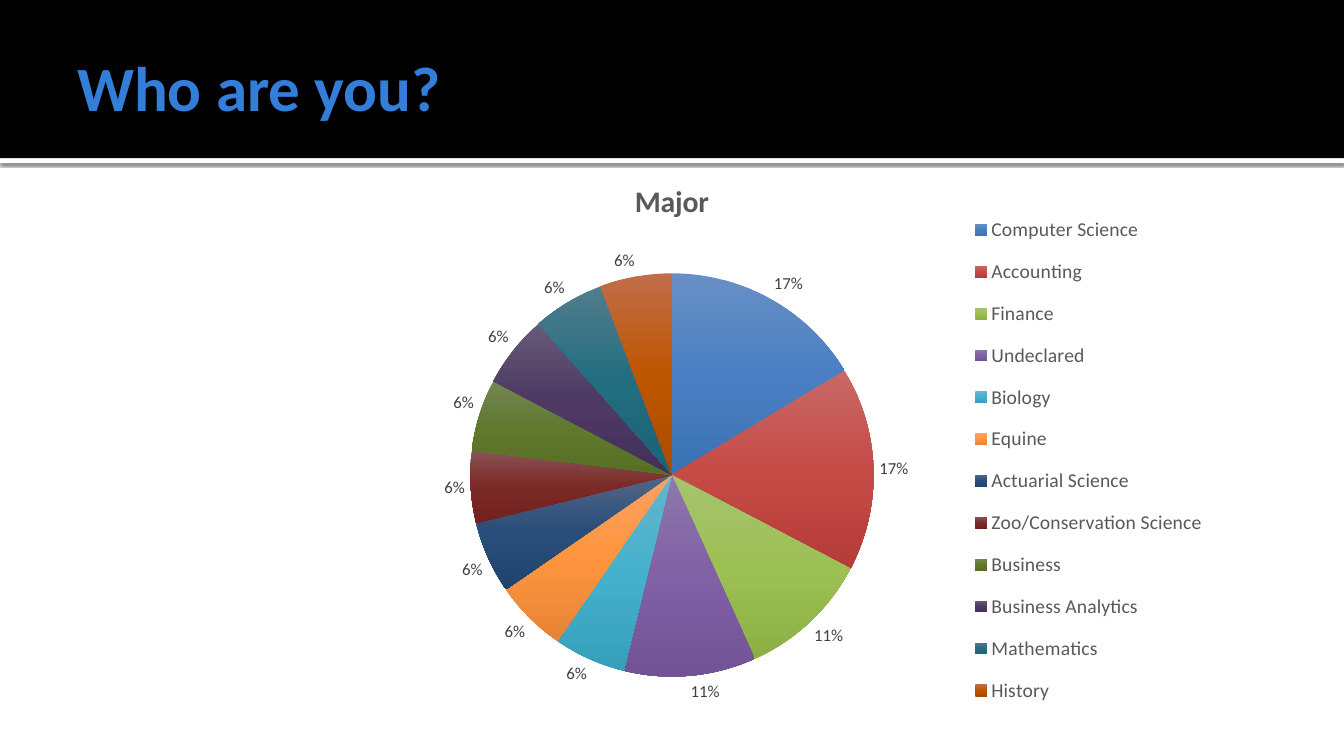
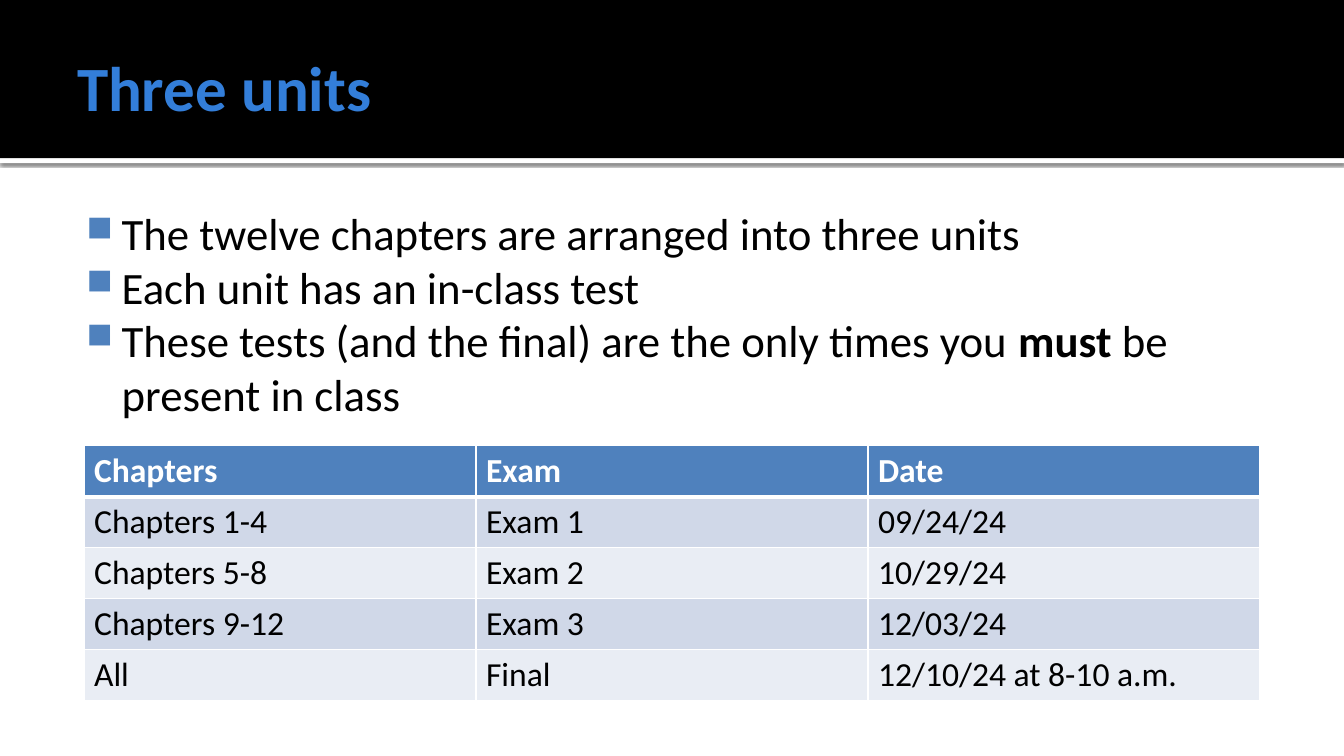
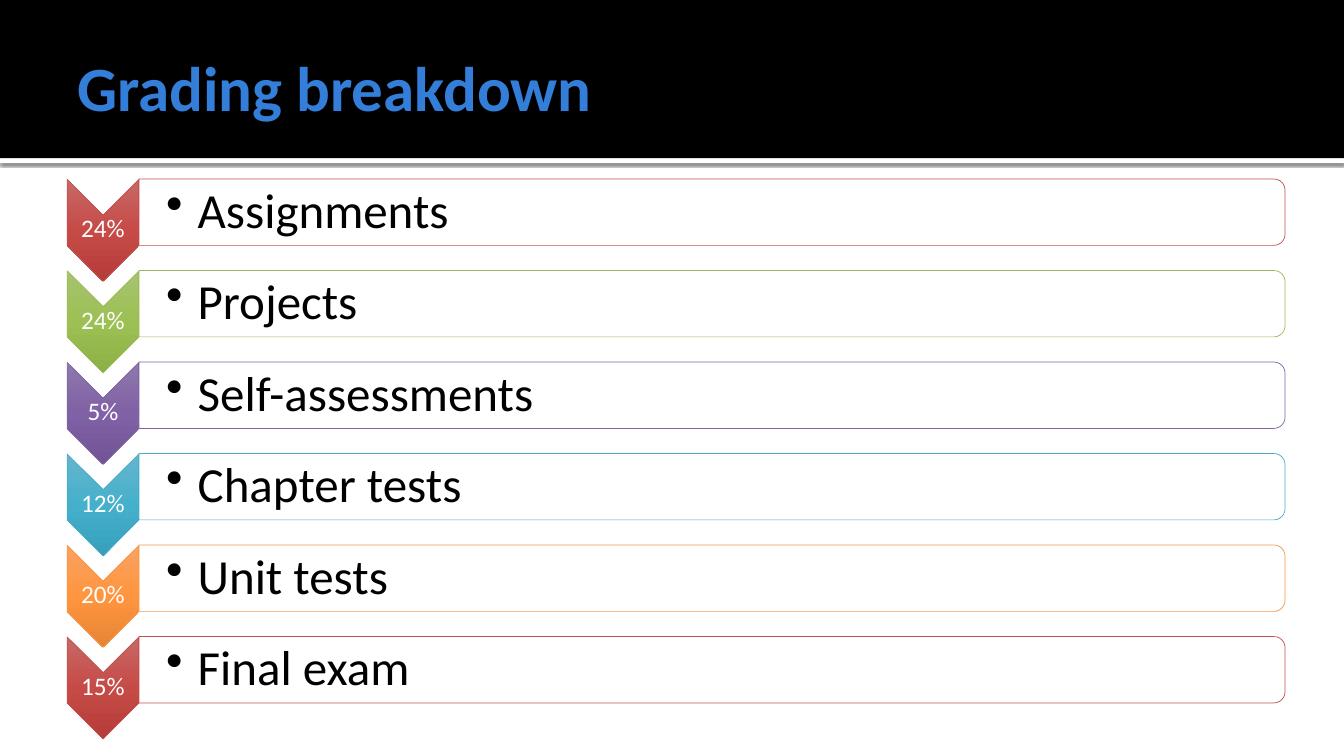
"""Build three course slides: majors pie chart, unit table and grading breakdown."""
from pptx import Presentation
from pptx.chart.data import CategoryChartData
from pptx.dml.color import RGBColor
from pptx.enum.chart import XL_CHART_TYPE, XL_LABEL_POSITION, XL_LEGEND_POSITION
from pptx.enum.shapes import MSO_SHAPE
from pptx.enum.text import MSO_ANCHOR, PP_ALIGN
from pptx.oxml import parse_xml
from pptx.oxml.ns import nsdecls, qn
from pptx.util import Pt

PIE = XL_CHART_TYPE.PIE
OUTSIDE = XL_LABEL_POSITION.OUTSIDE_END
RIGHT = XL_LEGEND_POSITION.RIGHT
RECT = MSO_SHAPE.RECTANGLE
CHEVRON = MSO_SHAPE.CHEVRON
ROUND_TOP = MSO_SHAPE.ROUND_2_SAME_RECTANGLE
MIDDLE = MSO_ANCHOR.MIDDLE
CENTER = PP_ALIGN.CENTER

FONT = "Calibri"
BLACK, WHITE, BLUE, TITLE, GREY = "000000", "FFFFFF", "4F81BD", "337ED9", "595959"
WIDTH, HEIGHT, BAND = 960, 540, 113
GRADIENTS = [
    ("688FC5", "4A80C3", "3B72B3"), ("C76967", "C64B47", "B63C39"),
    ("A6C36F", "9DC054", "8DB045"), ("8E78AC", "8061A5", "715396"),
    ("66B5CD", "45B0CC", "36A0BC"), ("FAA263", "FF953E", "E58435"),
    ("536686", "284D79", "20446E"), ("885353", "7B2926", "71211F"),
    ("748655", "60792D", "566F25"), ("665B76", "4D3964", "44315B"),
    ("517D8C", "236D81", "1B6376"), ("C16D4B", "BE5600", "A94C00"),
]
rgb = RGBColor.from_string


def text(tf, value, size=24, color=BLACK, bold=False, align=None, anchor=None,
         inset=(7.2, 3.6, 7.2, 3.6), spacing=None, bullet=None):
    """Fill a text frame; lines become paragraphs and *starred* words turn bold."""
    tf.word_wrap = True
    tf.vertical_anchor = anchor
    tf.margin_left, tf.margin_top, tf.margin_right, tf.margin_bottom = map(Pt, inset)
    for i, line in enumerate(value.split("\n")):
        p = tf.add_paragraph() if i else tf.paragraphs[0]
        p.alignment = align
        p.line_spacing = spacing
        if bullet:
            char, indent, start, tint, scale = bullet
            pPr = p._p.get_or_add_pPr()
            pPr.set("marL", str(Pt(start)))
            pPr.set("indent", str(-Pt(indent)))
            for xml in (f'<a:buClr {nsdecls("a")}><a:srgbClr val="{tint}"/></a:buClr>',
                        f'<a:buSzPct {nsdecls("a")} val="{scale * 1000}"/>',
                        f'<a:buChar {nsdecls("a")} char="{char}"/>'):
                pPr.append(parse_xml(xml))
        for j, part in enumerate(line.split("*")):
            r = p.add_run()
            r.text = part
            r.font.name, r.font.size = FONT, Pt(size)
            r.font.bold = bold or j % 2 == 1
            r.font.color.rgb = rgb(color)


def gradient(fill, root, colors):
    """Give the newest fill under root a three-stop gradient from top to bottom."""
    fill.gradient()
    grad = list(root.iter(qn("a:gradFill")))[-1]
    stops = "".join(f'<a:gs pos="{i * 50000}"><a:srgbClr val="{c}"/></a:gs>'
                    for i, c in enumerate(colors))
    grad.getparent().replace(grad, parse_xml(
        f'<a:gradFill {nsdecls("a")} rotWithShape="0"><a:gsLst>{stops}</a:gsLst>'
        '<a:lin ang="5400000" scaled="0"/></a:gradFill>'))


prs = Presentation()
prs.slide_width, prs.slide_height = Pt(WIDTH), Pt(HEIGHT)
slides = []
for title in ("Who are you?", "Three units", "Grading breakdown"):
    s = prs.slides.add_slide(prs.slide_layouts[6])
    for top, height, color in ((BAND, 3.6, WHITE), (0, BAND, BLACK)):
        sp = s.shapes.add_shape(RECT, 0, Pt(top), Pt(WIDTH), Pt(height))
        sp.shadow.inherit = False
        sp.fill.solid()
        sp.fill.fore_color.rgb = rgb(color)
        sp.line.fill.background()
        if color == WHITE:
            sp._element.spPr.find(qn("a:effectLst")).append(parse_xml(
                f'<a:outerShdw {nsdecls("a")} blurRad="{Pt(2.5)}" dist="{Pt(0.8)}" '
                'dir="5400000" algn="t" rotWithShape="0"><a:srgbClr val="000000">'
                '<a:alpha val="60000"/></a:srgbClr></a:outerShdw>'))
    box = s.shapes.add_textbox(Pt(48), Pt(12.2), Pt(864), Pt(98.6))
    text(box.text_frame, title, size=45, color=TITLE, bold=True, anchor=MIDDLE,
         inset=(7.2, 3.6, 3.6, 3.6))
    slides.append(s)
majors, units, grading = slides

data = CategoryChartData()
data.categories = [
    "Computer Science", "Accounting", "Finance", "Undeclared", "Biology", "Equine",
    "Actuarial Science", "Zoo/Conservation Science", "Business", "Business Analytics",
    "Mathematics", "History"]
data.add_series("Major", [17, 17, 11, 11] + [6] * 8)
chart = majors.shapes.add_chart(PIE, 0, Pt(BAND), Pt(WIDTH), Pt(HEIGHT - BAND), data).chart
chart.font.name, chart.font.size = FONT, Pt(10)
chart.font.color.rgb = rgb(BLACK)
chart.has_title = True
text(chart.chart_title.text_frame, "Major", size=21.3, color=GREY, bold=True)
chart.chart_title.include_in_layout = False
chart.has_legend = True
legend = chart.legend
legend.position = RIGHT
legend.include_in_layout = False
legend.font.name, legend.font.size = FONT, Pt(14)
legend.font.color.rgb = rgb(GREY)

plot = chart.plots[0]
plot.vary_by_categories = True
plot.has_data_labels = True
labels = plot.data_labels
labels.number_format, labels.number_format_is_linked = '0"%"', False
labels.show_value = True
labels.position = OUTSIDE
labels.font.name, labels.font.size = FONT, Pt(12)
labels.font.color.rgb = rgb("404040")
for i, colors in enumerate(GRADIENTS):
    gradient(plot.series[0].points[i].format.fill, chart._chartSpace, colors)

area = chart._chartSpace.chart.plotArea
for parent, index, target, frame in (
        (area, 0, '<c:layoutTarget val="inner"/>', (0.35, 0.19, 0.3, 0.68)),
        (legend._element, 1, "", (0.72, 0.07, 0.18, 0.87))):
    for old in parent.findall(qn("c:layout")):
        parent.remove(old)
    modes = "".join(f'<c:{k}Mode val="edge"/>' for k in "xy")
    sizes = "".join(f'<c:{k} val="{v}"/>' for k, v in zip("xywh", frame))
    parent.insert(index, parse_xml(
        f'<c:layout {nsdecls("c")}><c:manualLayout>{target}{modes}{sizes}'
        '</c:manualLayout></c:layout>'))

box = units.shapes.add_textbox(Pt(48), Pt(139.7), Pt(864), Pt(364))
text(box.text_frame,
     "The twelve chapters are arranged into three units\n"
     "Each unit has an in-class test\n"
     "These tests (and the final) are the only times you *must* be present in class",
     size=32, inset=(4.3, 7.2, 7.2, 3.6), bullet=("■", 25.2, 34.6, BLUE, 80))

rows = [
    ("Chapters", "Exam", "Date"),
    ("Chapters 1-4", "Exam 1", "09/24/24"),
    ("Chapters 5-8", "Exam 2", "10/29/24"),
    ("Chapters 9-12", "Exam 3", "12/03/24"),
    ("All", "Final", "12/10/24 at 8-10 a.m."),
]
table = units.shapes.add_table(5, 3, Pt(60), Pt(318.5), Pt(840), Pt(182)).table
for i, row in enumerate(rows):
    table.rows[i].height = Pt(36.4)
    for j, value in enumerate(row):
        cell = table.cell(i, j)
        cell.vertical_anchor = MIDDLE
        cell.fill.solid()
        cell.fill.fore_color.rgb = rgb(("E9EDF4", "D0D8E8")[i % 2] if i else BLUE)
        text(cell.text_frame, value, color=BLACK if i else WHITE, bold=i == 0)
        for k, side in enumerate("LRTB"):
            weight = 3 if (i, side) in ((0, "B"), (1, "T")) else 1
            cell._tc.get_or_add_tcPr().insert(k, parse_xml(
                f'<a:ln{side} {nsdecls("a")} w="{Pt(weight)}"><a:solidFill>'
                f'<a:srgbClr val="{WHITE}"/></a:solidFill></a:ln{side}>'))

parts = [
    ("24%", "Assignments", 1, "C0504D"), ("24%", "Projects", 2, "9BBB59"),
    ("5%", "Self-assessments", 3, "8064A2"), ("12%", "Chapter tests", 4, "4BACC6"),
    ("20%", "Unit tests", 5, "F79646"), ("15%", "Final exam", 1, "C0504D"),
]
for i, (share, name, shade, edge) in enumerate(parts):
    y = 65.36 * i
    for kind, left, top, width, height in ((CHEVRON, 37.2, 139.1, 72.8, 51.1),
                                           (ROUND_TOP, 484.9, -257.7, 47.4, 818.6)):
        sp = grading.shapes.add_shape(kind, Pt(left), Pt(top + y), Pt(width), Pt(height))
        sp.rotation = 90
        sp.shadow.inherit = False
        sp.line.color.rgb, sp.line.width = rgb(edge), Pt(0.5)
        if kind == CHEVRON:
            gradient(sp.fill, sp._element, GRADIENTS[shade])
        else:
            sp.fill.solid()
            sp.fill.fore_color.rgb = rgb(WHITE)
            sp._element.spPr.find(qn("a:solidFill"))[0].append(
                parse_xml(f'<a:alpha {nsdecls("a")} val="90000"/>'))
    box = grading.shapes.add_textbox(Pt(48), Pt(153.2 + y), Pt(51.1), Pt(21.6))
    text(box.text_frame, share, size=18, color=WHITE, align=CENTER, anchor=MIDDLE,
         inset=(0.8,) * 4, spacing=0.9)
    box = grading.shapes.add_textbox(Pt(99.3), Pt(130.2 + y), Pt(816.5), Pt(43.2))
    text(box.text_frame, name, size=35, anchor=MIDDLE, inset=(19.4, 1.6, 1.6, 1.6),
         spacing=0.9, bullet=("•", 22.5, 22.5, BLACK, 100))

prs.save("out.pptx")
